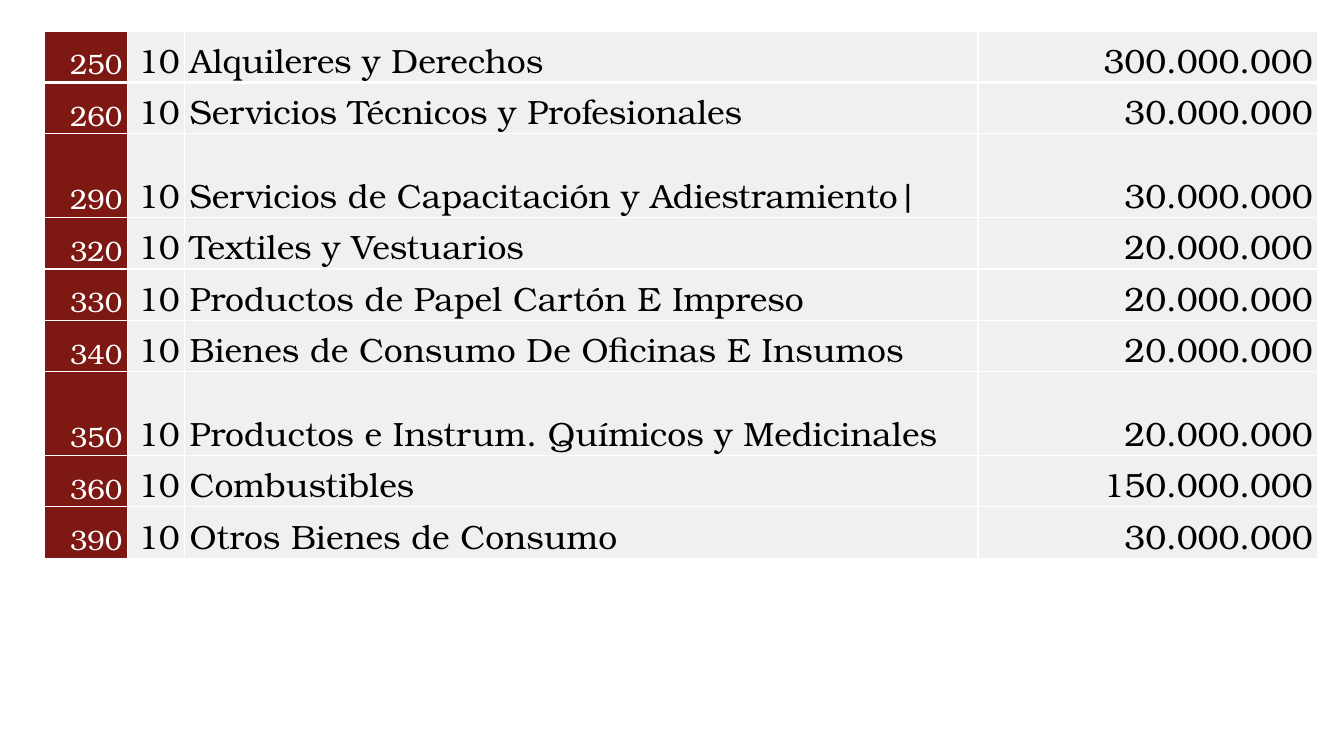
from dataclasses import dataclass

import lxml.etree
import pptx
import pptx.dml.color
import pptx.enum.text
import pptx.oxml.ns
import pptx.table
import pptx.util

Pt = pptx.util.Pt
RGBColor = pptx.dml.color.RGBColor
ALIGN = pptx.enum.text.PP_ALIGN

MAROON = RGBColor(0x7E, 0x18, 0x13)
PALE_GREY = RGBColor(0xF0, 0xF0, 0xF0)
WHITE = RGBColor(0xFF, 0xFF, 0xFF)
BLACK = RGBColor(0x00, 0x00, 0x00)
FONT_NAME = "TeX Gyre Bonum"
SINGLE_HEIGHT = 36.72
DOUBLE_HEIGHT = 59.76
FUNDING_SOURCE = "10"


@dataclass(frozen=True)
class BudgetLine:
    code: str
    concept: str
    amount: str
    height: float = SINGLE_HEIGHT


@dataclass(frozen=True)
class ColumnStyle:
    width: float
    align: ALIGN
    size: float = 24
    color: RGBColor = BLACK
    fill: RGBColor = PALE_GREY


BUDGET = [
    BudgetLine("250", "Alquileres y Derechos", "300.000.000"),
    BudgetLine("260", "Servicios Técnicos y Profesionales", "30.000.000"),
    BudgetLine("290", "Servicios de Capacitación y Adiestramiento|", "30.000.000", DOUBLE_HEIGHT),
    BudgetLine("320", "Textiles y Vestuarios", "20.000.000"),
    BudgetLine("330", "Productos de Papel Cartón E Impreso", "20.000.000"),
    BudgetLine("340", "Bienes de Consumo De Oficinas E Insumos", "20.000.000"),
    BudgetLine("350", "Productos e Instrum. Químicos y Medicinales", "20.000.000", DOUBLE_HEIGHT),
    BudgetLine("360", "Combustibles", "150.000.000"),
    BudgetLine("390", "Otros Bienes de Consumo", "30.000.000"),
]

COLUMNS = [
    ColumnStyle(59.04, ALIGN.RIGHT, 20, WHITE, MAROON),
    ColumnStyle(41.04, ALIGN.RIGHT),
    ColumnStyle(566.64, ALIGN.LEFT),
    ColumnStyle(242.64, ALIGN.RIGHT),
]

CELL_FORMAT = {
    "vertical_anchor": pptx.enum.text.MSO_ANCHOR.BOTTOM,
    "margin_left": Pt(3.6),
    "margin_right": Pt(3.6),
    "margin_top": Pt(0),
    "margin_bottom": Pt(0),
}


def apply_format(target: object, values: dict) -> None:
    for name, value in values.items():
        setattr(target, name, value)


def add_borders(cell: pptx.table._Cell, bottom_width: float) -> None:
    properties = cell._tc.get_or_add_tcPr()
    for side, width in {"L": 1, "R": 1, "T": 1, "B": bottom_width}.items():
        border = lxml.etree.SubElement(
            properties, pptx.oxml.ns.qn(f"a:ln{side}"), w=str(Pt(width)))
        solid = lxml.etree.SubElement(border, pptx.oxml.ns.qn("a:solidFill"))
        lxml.etree.SubElement(solid, pptx.oxml.ns.qn("a:srgbClr"), val=str(WHITE))


def fill_cell(cell: pptx.table._Cell, text: str, style: ColumnStyle, bottom_width: float) -> None:
    add_borders(cell, bottom_width)
    cell.fill.solid()
    cell.fill.fore_color.rgb = style.fill
    apply_format(cell, CELL_FORMAT)
    paragraph = cell.text_frame.paragraphs[0]
    apply_format(paragraph, {"alignment": style.align, "line_spacing": 1.07})
    run = paragraph.add_run()
    run.text = text
    apply_format(run.font, {"name": FONT_NAME, "size": Pt(style.size), "bold": False})
    run.font.color.rgb = style.color


def main() -> None:
    presentation = pptx.Presentation()
    apply_format(presentation, {"slide_width": Pt(960), "slide_height": Pt(540)})
    slide = presentation.slides.add_slide(presentation.slide_layouts[6])
    budget_table = slide.shapes.add_table(
        len(BUDGET), len(COLUMNS), Pt(31.9), Pt(22.2),
        Pt(sum(column.width for column in COLUMNS)),
        Pt(sum(line.height for line in BUDGET))).table
    apply_format(budget_table, {"first_row": False, "horz_banding": False})
    for index, style in enumerate(COLUMNS):
        budget_table.columns[index].width = Pt(style.width)
    for row, line in enumerate(BUDGET):
        budget_table.rows[row].height = Pt(line.height)
        texts = (line.code, FUNDING_SOURCE, line.concept, line.amount)
        for column, (text, style) in enumerate(zip(texts, COLUMNS)):
            fill_cell(budget_table.cell(row, column), text, style, 3 if row == 0 else 1)
    presentation.save("out.pptx")


if __name__ == "__main__":
    main()
